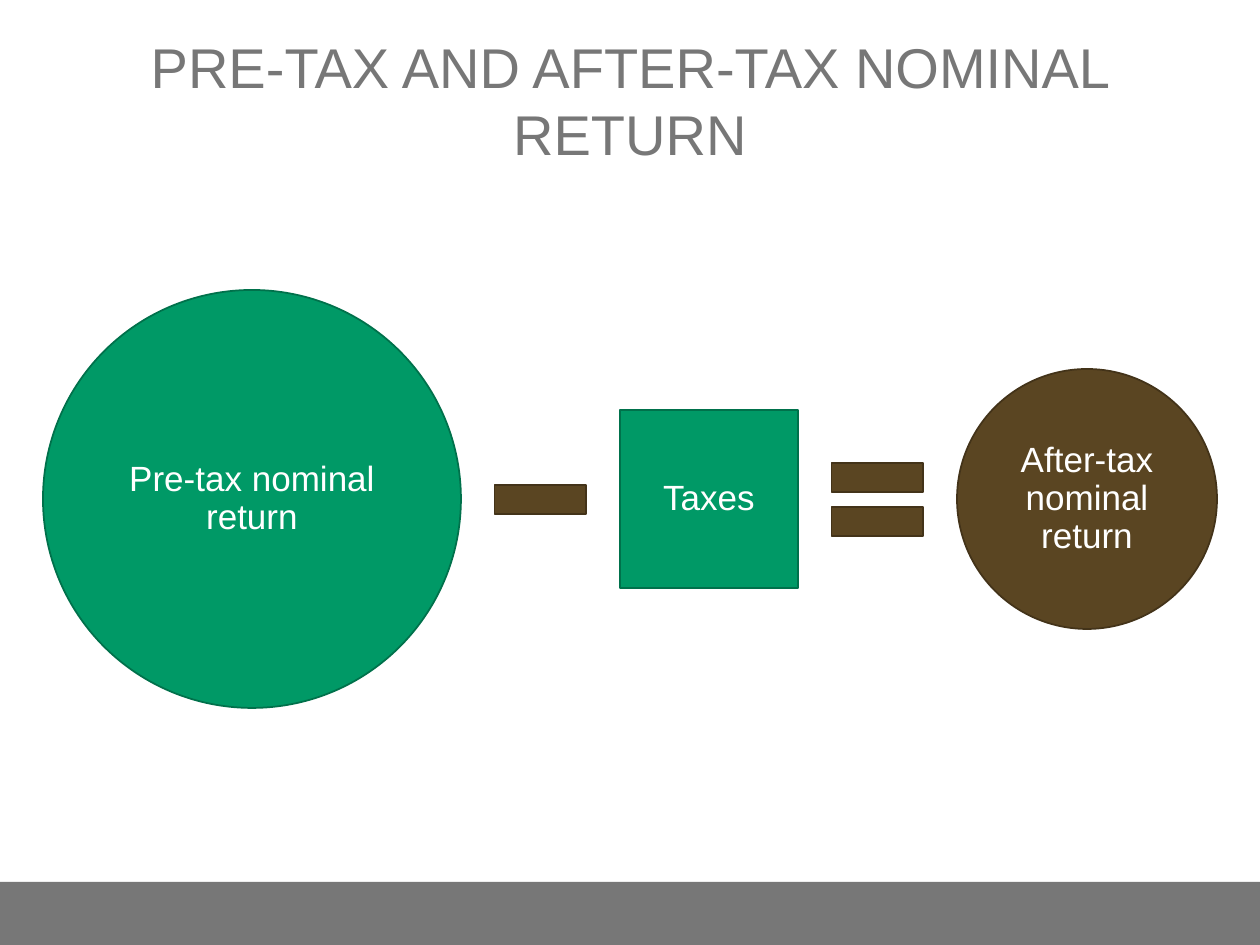
from dataclasses import dataclass

from pptx import Presentation
from pptx import util as u
from pptx.dml.color import RGBColor
from pptx.enum import shapes, text

PX = u.Inches(1) // 126


@dataclass(frozen=True)
class Theme:
    font: str = "Arial"
    gray: str = "777777"
    white: str = "FFFFFF"
    green: tuple = ("009966", "00714B")
    brown: tuple = ("5A4522", "433319")
    title_size: int = 32
    label_size: int = 20


THEME = Theme()
SHAPE = shapes.MSO_SHAPE


def rgb(value):
    return RGBColor.from_string(value)


def set_text(sp, content, size, color):
    tf = sp.text_frame
    tf.text = content
    tf.word_wrap = True
    tf.auto_size = text.MSO_AUTO_SIZE.NONE
    tf.vertical_anchor = text.MSO_ANCHOR.MIDDLE
    p = tf.paragraphs[0]
    p.alignment = text.PP_ALIGN.CENTER
    p.font.name = THEME.font
    p.font.size = u.Pt(size)
    p.font.color.rgb = rgb(color)
    return tf


def add_title(s, content, x, y, w, h):
    sp = s.shapes.title
    sp.left, sp.top, sp.width, sp.height = (v * PX for v in (x, y, w, h))
    set_text(sp, content, THEME.title_size, THEME.gray)


def add_shape(s, kind, x, y, w, h, fill, line=None):
    sp = s.shapes.add_shape(kind, x * PX, y * PX, w * PX, h * PX)
    sp.shadow.inherit = False
    sp.fill.solid()
    sp.fill.fore_color.rgb = rgb(fill)
    if line:
        sp.line.color.rgb = rgb(line)
        sp.line.width = u.Pt(1)
    else:
        sp.line.fill.background()
    return sp


def add_label(sp, content):
    tf = set_text(sp, content, THEME.label_size, THEME.white)
    tf.margin_left = tf.margin_right = tf.margin_top = tf.margin_bottom = 4 * PX
    tf.paragraphs[0].line_spacing = 0.9


def add_equation(s, terms, x, center_y, gap):
    for kind, size, colors, label in terms:
        sp = add_shape(s, kind, x, center_y - size // 2, size, size, *colors)
        if label:
            add_label(sp, label)
        x += size + gap


def main():
    prs = Presentation()
    prs.slide_width, prs.slide_height = u.Inches(10), u.Inches(7.5)
    s = prs.slides.add_slide(prs.slide_layouts[5])
    add_shape(s, SHAPE.RECTANGLE, 0, 882, 1260, 63, THEME.gray)
    add_title(s, "PRE-TAX AND AFTER-TAX NOMINAL RETURN", 53, 21, 1154, 158)
    terms = [
        (SHAPE.OVAL, 418, THEME.green, "Pre-tax nominal return"),
        (SHAPE.MATH_MINUS, 125, THEME.brown, None),
        (SHAPE.RECTANGLE, 178, THEME.green, "Taxes"),
        (SHAPE.MATH_EQUAL, 125, THEME.brown, None),
        (SHAPE.OVAL, 260, THEME.brown, "After-tax nominal return"),
    ]
    add_equation(s, terms, x=43, center_y=499, gap=17)
    prs.save("out.pptx")


if __name__ == "__main__":
    main()
